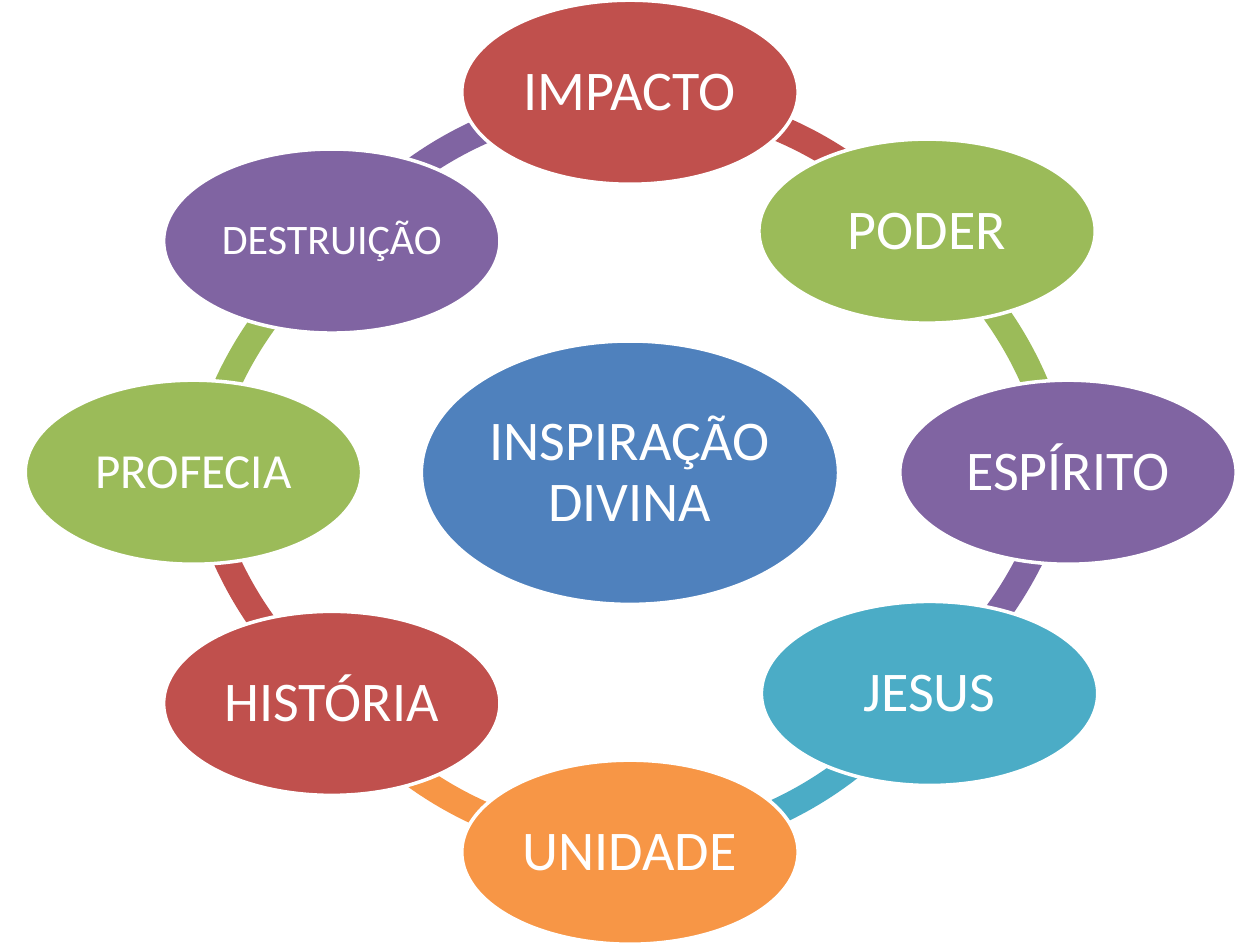
from pptx import Presentation
from pptx import util as u
from pptx.dml.color import RGBColor
from pptx.enum import shapes, text

WHITE = RGBColor(0xFF, 0xFF, 0xFF)
BLUE = RGBColor(0x4F, 0x81, 0xBD)
RED = RGBColor(0xC0, 0x50, 0x4D)
GREEN = RGBColor(0x9B, 0xBB, 0x59)
PURPLE = RGBColor(0x80, 0x64, 0xA2)
TEAL = RGBColor(0x4B, 0xAC, 0xC6)
ORANGE = RGBColor(0xF7, 0x96, 0x46)

RING_SIZE = 15.6
RING_THICKNESS = 0.034
DEGREES_TO_ADJUSTMENT = 0.6
TOPIC_SIZE = (6.78, 3.71)
CORE_SIZE = (8.41, 5.31)

ARCS = [
    ((12.78, 9.53), 217.45, 269.52, PURPLE),
    ((11.43, 10.9), 190.23, 231.79, GREEN),
    ((11.43, 8.18), 128.21, 169.77, RED),
    ((12.78, 9.53), 90.48, 142.55, ORANGE),
    ((12.5, 9.53), 35.57, 88.4, TEAL),
    ((14.02, 7.92), 12.03, 52.23, PURPLE),
    ((13.94, 10.69), 308.23, 351.3, GREEN),
    ((12.78, 9.53), 269.53, 320.64, RED),
]

TOPICS = [
    ("IMPACTO", (12.7, 1.86), RED, 32),
    ("PODER", (18.69, 4.66), GREEN, 32),
    ("ESPÍRITO", (21.53, 9.52), PURPLE, 32),
    ("JESUS", (18.74, 13.98), TEAL, 32),
    ("UNIDADE", (12.7, 17.18), ORANGE, 32),
    ("HISTÓRIA", (6.69, 14.18), RED, 32),
    ("PROFECIA", (3.9, 9.52), GREEN, 28),
    ("DESTRUIÇÃO", (6.69, 4.86), PURPLE, 24),
]


class CycleSlide:
    """Draws a radial cycle of ellipses joined by arcs on one slide."""

    font_name = "Calibri"
    inset = u.Cm(0.1)

    def __init__(self, slide):
        self.slide = slide

    def centred_shape(self, kind, centre, size, color):
        left, top = (c - s / 2 for c, s in zip(centre, size))
        shape = self.slide.shapes.add_shape(
            kind, u.Cm(left), u.Cm(top), u.Cm(size[0]), u.Cm(size[1]))
        shape.shadow.inherit = False
        shape.fill.solid()
        shape.fill.fore_color.rgb = color
        return shape

    def arc(self, centre, start, end, color):
        shape = self.centred_shape(
            shapes.MSO_SHAPE.BLOCK_ARC, centre, (RING_SIZE, RING_SIZE), color)
        shape.line.fill.background()
        shape.adjustments[0] = start * DEGREES_TO_ADJUSTMENT
        shape.adjustments[1] = end * DEGREES_TO_ADJUSTMENT
        shape.adjustments[2] = RING_THICKNESS

    def ellipse(self, label, centre, color, font_size, size=TOPIC_SIZE):
        shape = self.centred_shape(shapes.MSO_SHAPE.OVAL, centre, size, color)
        shape.line.color.rgb = WHITE
        shape.line.width = u.Pt(2)
        frame = shape.text_frame
        frame.text = label
        frame.word_wrap = True
        frame.vertical_anchor = text.MSO_ANCHOR.MIDDLE
        frame.margin_left = frame.margin_right = self.inset
        frame.margin_top = frame.margin_bottom = self.inset
        paragraph = frame.paragraphs[0]
        paragraph.alignment = text.PP_ALIGN.CENTER
        paragraph.line_spacing = 0.9
        font = paragraph.runs[0].font
        font.name = self.font_name
        font.size = u.Pt(font_size)
        font.color.rgb = WHITE


def main():
    presentation = Presentation()
    presentation.slide_width = u.Cm(25.4)
    presentation.slide_height = u.Cm(19.05)
    blank_layout = presentation.slide_layouts[6]
    cycle = CycleSlide(presentation.slides.add_slide(blank_layout))
    for arc in ARCS:
        cycle.arc(*arc)
    cycle.ellipse("INSPIRAÇÃO DIVINA", (12.7, 9.53), BLUE, 32, CORE_SIZE)
    for topic in TOPICS:
        cycle.ellipse(*topic)
    presentation.save("out.pptx")


if __name__ == "__main__":
    main()
